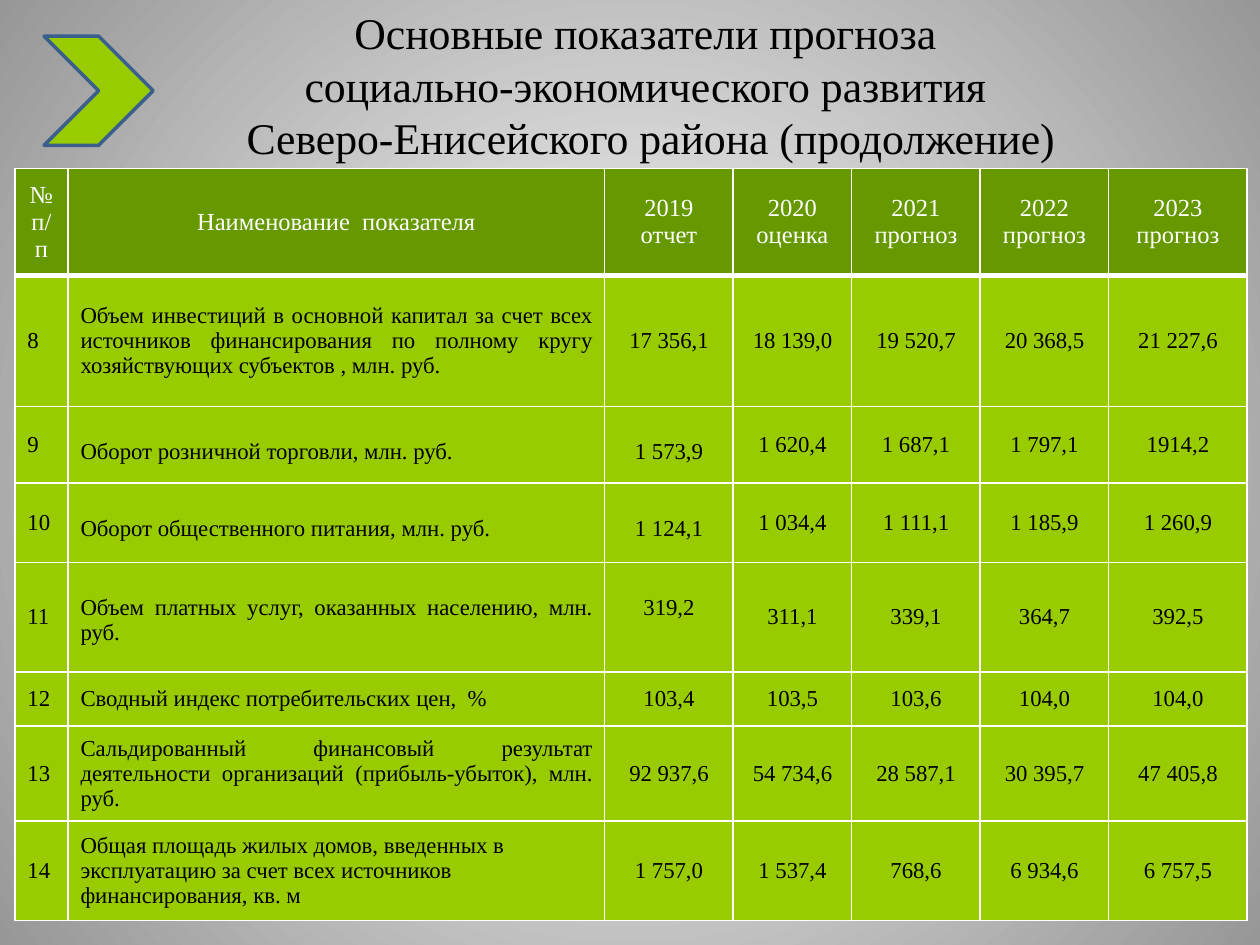
from dataclasses import dataclass

from lxml import etree
from pptx import Presentation, util as u
from pptx.dml.color import RGBColor
from pptx.enum import shapes, text
from pptx.oxml import parse_xml
from pptx.oxml.ns import nsdecls, qn

FONT = "Times New Roman"
BLACK = RGBColor(0x00, 0x00, 0x00)
WHITE = RGBColor(0xFF, 0xFF, 0xFF)
GREY = RGBColor(0x97, 0x97, 0x97)
DARK_GREEN = RGBColor(0x66, 0x99, 0x00)
LIME = RGBColor(0x99, 0xCC, 0x00)
BLUE = RGBColor(0x3A, 0x5F, 0x8C)

LEFT = text.PP_ALIGN.LEFT
CENTER = text.PP_ALIGN.CENTER
JUSTIFY = text.PP_ALIGN.JUSTIFY
LOWERED_MARGIN = u.Cm(0.66)


@dataclass
class Indicator:
    number: str
    name: str
    values: tuple[str, ...]
    height: float
    align: text.PP_ALIGN = JUSTIFY
    lowered: bool = False


TITLE = (
    "Основные показатели прогноза \n"
    "социально-экономического развития \n"
    "Северо-Енисейского района (продолжение)"
)
HEADINGS = (
    "№ п/п", "Наименование  показателя", "2019 отчет", "2020 оценка",
    "2021 прогноз", "2022\nпрогноз", "2023 прогноз",
)
COLUMN_WIDTHS = (1.07, 10.82, 2.59, 2.39, 2.59, 2.59, 2.79)
HEADER_HEIGHT = 2.15
INDICATORS = (
    Indicator(
        "8",
        "Объем инвестиций в основной капитал за счет всех источников "
        "финансирования по полному кругу хозяйствующих субъектов , млн. руб.",
        ("17 356,1", "18 139,0", "19 520,7", "20 368,5", "21 227,6"), 2.64),
    Indicator(
        "9", "Оборот розничной торговли, млн. руб.",
        ("1 573,9", "1 620,4", "1 687,1", "1 797,1", "1914,2"),
        1.55, LEFT, True),
    Indicator(
        "10", "Оборот общественного питания, млн. руб.",
        ("1 124,1", "1 034,4", "1 111,1", "1 185,9", "1 260,9"),
        1.6, LEFT, True),
    Indicator(
        "11", "Объем платных услуг, оказанных населению, млн. руб.",
        ("319,2", "311,1", "339,1", "364,7", "392,5"), 2.21, lowered=True),
    Indicator(
        "12", "Сводный индекс потребительских цен,  %",
        ("103,4", "103,5", "103,6", "104,0", "104,0"), 1.09),
    Indicator(
        "13",
        "Сальдированный финансовый результат деятельности организаций "
        "(прибыль-убыток), млн. руб.",
        ("92 937,6", "54 734,6", "28 587,1", "30 395,7", "47 405,8"), 1.77),
    Indicator(
        "14",
        "Общая площадь жилых домов, введенных в эксплуатацию за счет всех "
        "источников финансирования, кв. м",
        ("1 757,0", "1 537,4", "768,6", "6 934,6", "6 757,5"), 2.01, LEFT),
)


def paint_background(page) -> None:
    page.background.fill.solid()
    properties = page.element.find(".//" + qn("p:bgPr"))
    gradient = parse_xml(
        f'<a:gradFill {nsdecls("a")} rotWithShape="1"><a:gsLst>'
        f'<a:gs pos="0"><a:srgbClr val="{WHITE}"/></a:gs>'
        f'<a:gs pos="100000"><a:srgbClr val="{GREY}"/></a:gs></a:gsLst>'
        '<a:path path="circle">'
        '<a:fillToRect l="50000" t="50000" r="50000" b="50000"/>'
        '</a:path></a:gradFill>'
    )
    properties.replace(properties[0], gradient)


def write_text(frame, content: str, size: float, color: RGBColor,
               align: text.PP_ALIGN) -> None:
    frame.text = content
    for para in frame.paragraphs:
        para.alignment = align
        for span in para.runs:
            span.font.name = FONT
            span.font.size = u.Pt(size)
            span.font.color.rgb = color


def add_title(page) -> None:
    box = page.shapes.add_textbox(u.Cm(0.84), 0, u.Cm(24.56), u.Cm(5.51))
    box.text_frame.word_wrap = True
    write_text(box.text_frame, TITLE, 25, BLACK, CENTER)
    for para in box.text_frame.paragraphs:
        para.line_spacing = u.Pt(30)


def set_borders(cell, bottom: float) -> None:
    properties = cell._tc.get_or_add_tcPr()
    widths = {"lnL": 1, "lnR": 1, "lnT": 1, "lnB": bottom}
    for position, (side, width) in enumerate(widths.items()):
        line = etree.Element(qn(f"a:{side}"), w=str(u.Pt(width)))
        fill = etree.SubElement(line, qn("a:solidFill"))
        etree.SubElement(fill, qn("a:srgbClr"), val=str(WHITE))
        properties.insert(position, line)


def fill_cell(cell, content: str, size: float, color: RGBColor,
              fill: RGBColor, align: text.PP_ALIGN, bottom: float = 1,
              lowered: bool = False) -> None:
    write_text(cell.text_frame, content, size, color, align)
    cell.fill.solid()
    cell.fill.fore_color.rgb = fill
    cell.vertical_anchor = text.MSO_ANCHOR.MIDDLE
    if lowered:
        cell.vertical_anchor = text.MSO_ANCHOR.TOP
        cell.margin_top = LOWERED_MARGIN
    set_borders(cell, bottom)


def add_indicator_table(page) -> None:
    heights = [HEADER_HEIGHT, *(item.height for item in INDICATORS)]
    table = page.shapes.add_table(
        len(heights), len(HEADINGS), u.Cm(0.3), u.Cm(3.4),
        u.Cm(sum(COLUMN_WIDTHS)), u.Cm(sum(heights)),
    ).table
    for column, width in zip(table.columns, COLUMN_WIDTHS):
        column.width = u.Cm(width)
    for row, height in zip(table.rows, heights):
        row.height = u.Cm(height)
    for index, heading in enumerate(HEADINGS):
        fill_cell(table.cell(0, index), heading, 14, WHITE, DARK_GREEN,
                  CENTER, bottom=3)
    for row_index, item in enumerate(INDICATORS, start=1):
        for index, content in enumerate((item.number, item.name, *item.values)):
            align = item.align if index < 2 else CENTER
            fill_cell(table.cell(row_index, index), content, 13, BLACK, LIME,
                      align, lowered=item.lowered and index in (1, 2))


def add_chevron(page) -> None:
    chevron = page.shapes.add_shape(
        shapes.MSO_SHAPE.CHEVRON, u.Cm(0.89), u.Cm(0.73), u.Cm(2.2), u.Cm(2.2))
    chevron.shadow.inherit = False
    chevron.fill.solid()
    chevron.fill.fore_color.rgb = LIME
    chevron.line.color.rgb = BLUE
    chevron.line.width = u.Pt(2)


def main() -> None:
    deck = Presentation()
    deck.slide_width, deck.slide_height = u.Cm(25.4), u.Cm(19.05)
    page = deck.slides.add_slide(deck.slide_layouts[6])
    paint_background(page)
    add_title(page)
    add_indicator_table(page)
    add_chevron(page)
    deck.save("out.pptx")


if __name__ == "__main__":
    main()
